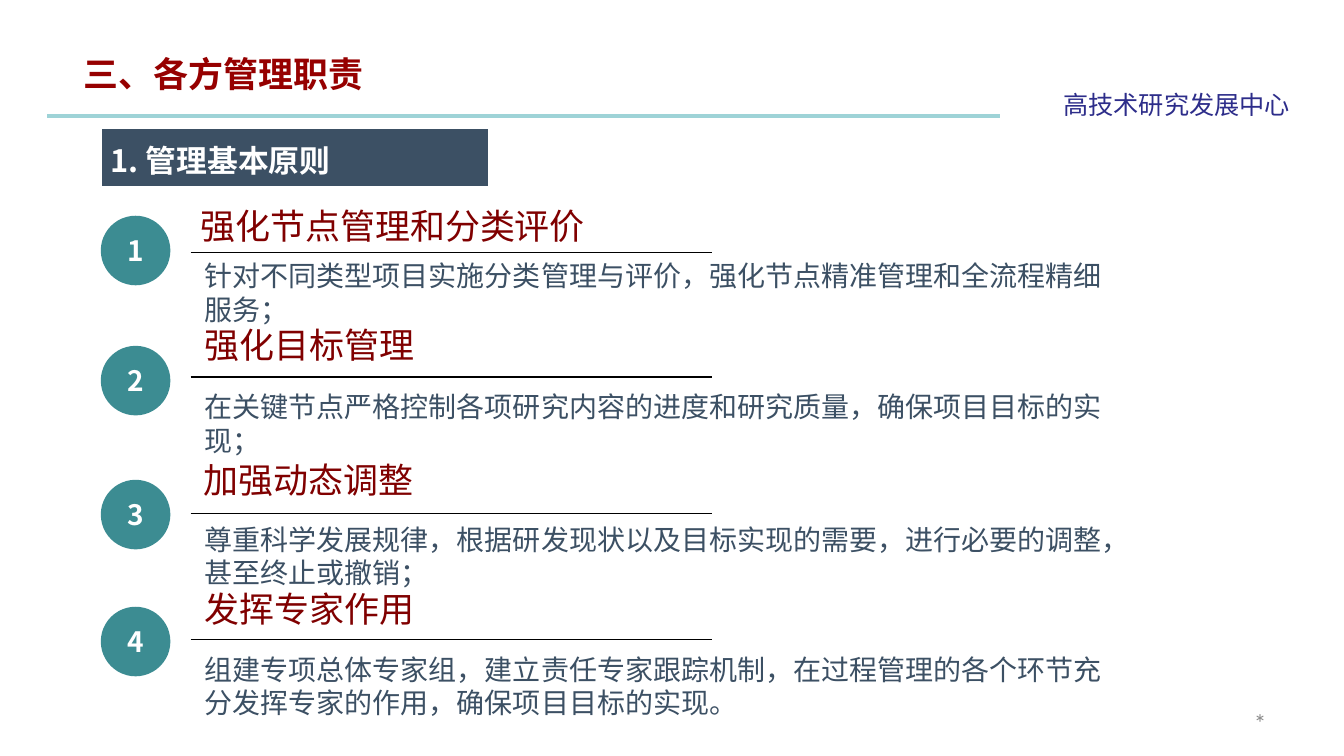
"""Builds the slide on the basic principles of project management."""
from dataclasses import dataclass

from lxml.etree import SubElement
from pptx import Presentation
from pptx.dml.color import RGBColor
from pptx.enum.shapes import MSO_CONNECTOR, MSO_SHAPE
from pptx.enum.text import MSO_ANCHOR, MSO_AUTO_SIZE, PP_ALIGN
from pptx.oxml.ns import qn
from pptx.shapes.autoshape import Shape
from pptx.slide import Slide
from pptx.text.text import _Paragraph
from pptx.util import Pt

CJK_FONT = "Noto Sans CJK SC"
TITLE_RED = RGBColor(0x96, 0x00, 0x00)
HEADING_RED = RGBColor(0x80, 0x00, 0x00)
SLATE = RGBColor(0x3C, 0x50, 0x64)
TEAL = RGBColor(0x3C, 0x8C, 0x92)
PALE_TEAL = RGBColor(0x9E, 0xD3, 0xD7)
NAVY = RGBColor(0x2D, 0x2D, 0x8A)
GREY = RGBColor(0x89, 0x89, 0x89)
BLACK = RGBColor(0x00, 0x00, 0x00)
WHITE = RGBColor(0xFF, 0xFF, 0xFF)


@dataclass(frozen=True)
class Box:
    left: float
    top: float
    width: float
    height: float

    def lengths(self) -> tuple[Pt, Pt, Pt, Pt]:
        return Pt(self.left), Pt(self.top), Pt(self.width), Pt(self.height)


@dataclass(frozen=True)
class TextStyle:
    size: float
    color: RGBColor
    bold: bool = False
    font: str = CJK_FONT


@dataclass(frozen=True)
class Principle:
    heading: str
    detail: str
    heading_left: float
    heading_top: float
    heading_width: float
    badge_top: float
    rule_top: float
    detail_top: float


TITLE_STYLE = TextStyle(25, TITLE_RED, bold=True)
HEADING_STYLE = TextStyle(25, HEADING_RED)
DETAIL_STYLE = TextStyle(20, SLATE)
BADGE_STYLE = TextStyle(20, WHITE, bold=True)
BANNER_STYLE = TextStyle(22, WHITE, bold=True)
CENTER_STYLE = TextStyle(18, NAVY)
PAGE_MARK_STYLE = TextStyle(18, GREY, font="Calibri")

PRINCIPLES = (
    Principle("强化节点管理和分类评价",
              "针对不同类型项目实施分类管理与评价，强化节点精准管理和全流程精细服务；",
              136.1, 142.6, 292.3, 154.1, 180.7, 181.4),
    Principle("强化目标管理",
              "在关键节点严格控制各项研究内容的进度和研究质量，确保项目目标的实现；",
              139, 227.5, 166.3, 247, 269.3, 275),
    Principle("加强动态调整",
              "尊重科学发展规律，根据研发现状以及目标实现的需要，进行必要的调整，甚至终止或撤销；",
              138.2, 324, 166.3, 342.7, 366.8, 369.4),
    Principle("发挥专家作用",
              "组建专项总体专家组，建立责任专家跟踪机制，在过程管理的各个环节充分发挥专家的作用，确保项目目标的实现。",
              139, 416.2, 166.3, 433.4, 456.5, 462.2),
)


def write(shape: Shape, text: str, style: TextStyle) -> _Paragraph:
    """Put one styled paragraph into a shape."""
    paragraph = shape.text_frame.paragraphs[0]
    paragraph.text = text
    paragraph.alignment = PP_ALIGN.LEFT
    font = paragraph.font
    font.size = Pt(style.size)
    font.bold = style.bold
    font.color.rgb = style.color
    font.name = style.font
    defaults = paragraph._p.pPr.find(qn("a:defRPr"))
    SubElement(defaults, qn("a:ea")).set("typeface", style.font)
    return paragraph


def add_text(slide: Slide, box: Box, text: str, style: TextStyle,
             wrap: bool = True) -> Shape:
    """Add a text box that grows with its text."""
    text_box = slide.shapes.add_textbox(*box.lengths())
    text_box.text_frame.word_wrap = wrap
    text_box.text_frame.auto_size = MSO_AUTO_SIZE.SHAPE_TO_FIT_TEXT
    write(text_box, text, style)
    return text_box


def add_filled(slide: Slide, kind: MSO_SHAPE, box: Box, fill: RGBColor) -> Shape:
    """Add a flat filled shape without an outline."""
    shape = slide.shapes.add_shape(kind, *box.lengths())
    shape.shadow.inherit = False
    shape.fill.solid()
    shape.fill.fore_color.rgb = fill
    shape.line.fill.background()
    shape.text_frame.vertical_anchor = MSO_ANCHOR.MIDDLE
    return shape


def add_rule(slide: Slide, left: float, right: float, top: float,
             color: RGBColor, weight: float) -> None:
    """Draw a horizontal line."""
    rule = slide.shapes.add_connector(
        MSO_CONNECTOR.STRAIGHT, Pt(left), Pt(top), Pt(right), Pt(top))
    rule.line.color.rgb = color
    rule.line.width = Pt(weight)
    SubElement(rule._element.spPr, qn("a:effectLst"))


def add_header(slide: Slide) -> None:
    """Draw the title, the header line, the centre name and the banner."""
    add_rule(slide, 33.8, 714.2, 82.8, PALE_TEAL, 3)
    add_text(slide, Box(752.4, 60.5, 177.8, 28.8), "高技术研究发展中心",
             CENTER_STYLE, wrap=False)
    title = add_text(slide, Box(52.6, 33.8, 502.6, 37.4), "三、各方管理职责", TITLE_STYLE)
    title_line = title.text_frame.paragraphs[0]
    title_line.line_spacing = Pt(30)
    title_line.space_before = title_line.space_after = Pt(6)

    banner = add_filled(slide, MSO_SHAPE.FOLDED_CORNER, Box(72, 91.4, 277.2, 42.5), SLATE)
    adjustments = banner._element.spPr.find(qn("a:prstGeom")).get_or_add_avLst()
    SubElement(adjustments, qn("a:gd"), name="adj", fmla="val 0")
    banner.line.color.rgb = WHITE
    banner.line.width = Pt(1.5)
    banner.text_frame.margin_top = banner.text_frame.margin_bottom = Pt(0)
    write(banner, "1. 管理基本原则", BANNER_STYLE).line_spacing = Pt(30)


def add_principle(slide: Slide, number: int, principle: Principle) -> None:
    """Draw one numbered principle with its heading, rule and detail."""
    badge = add_filled(slide, MSO_SHAPE.OVAL, Box(72, principle.badge_top, 49.7, 49.7), TEAL)
    write(badge, str(number), BADGE_STYLE).alignment = PP_ALIGN.CENTER
    heading_box = Box(principle.heading_left, principle.heading_top,
                      principle.heading_width, 37.4)
    add_text(slide, heading_box, principle.heading, HEADING_STYLE, wrap=False)
    add_rule(slide, 136.1, 508.3, principle.rule_top, BLACK, 0.75)
    add_text(slide, Box(139, principle.detail_top, 664.6, 55.4),
             principle.detail, DETAIL_STYLE)


def main() -> None:
    """Build and save the presentation."""
    presentation = Presentation()
    presentation.slide_width = Pt(960)
    presentation.slide_height = Pt(540)
    slide = presentation.slides.add_slide(presentation.slide_layouts[6])
    add_header(slide)
    for number, principle in enumerate(PRINCIPLES, start=1):
        add_principle(slide, number, principle)
    page_mark = add_text(slide, Box(888.5, 501.8, 57.6, 28.8), "*", PAGE_MARK_STYLE)
    page_mark.text_frame.vertical_anchor = MSO_ANCHOR.MIDDLE
    presentation.save("out.pptx")


if __name__ == "__main__":
    main()
